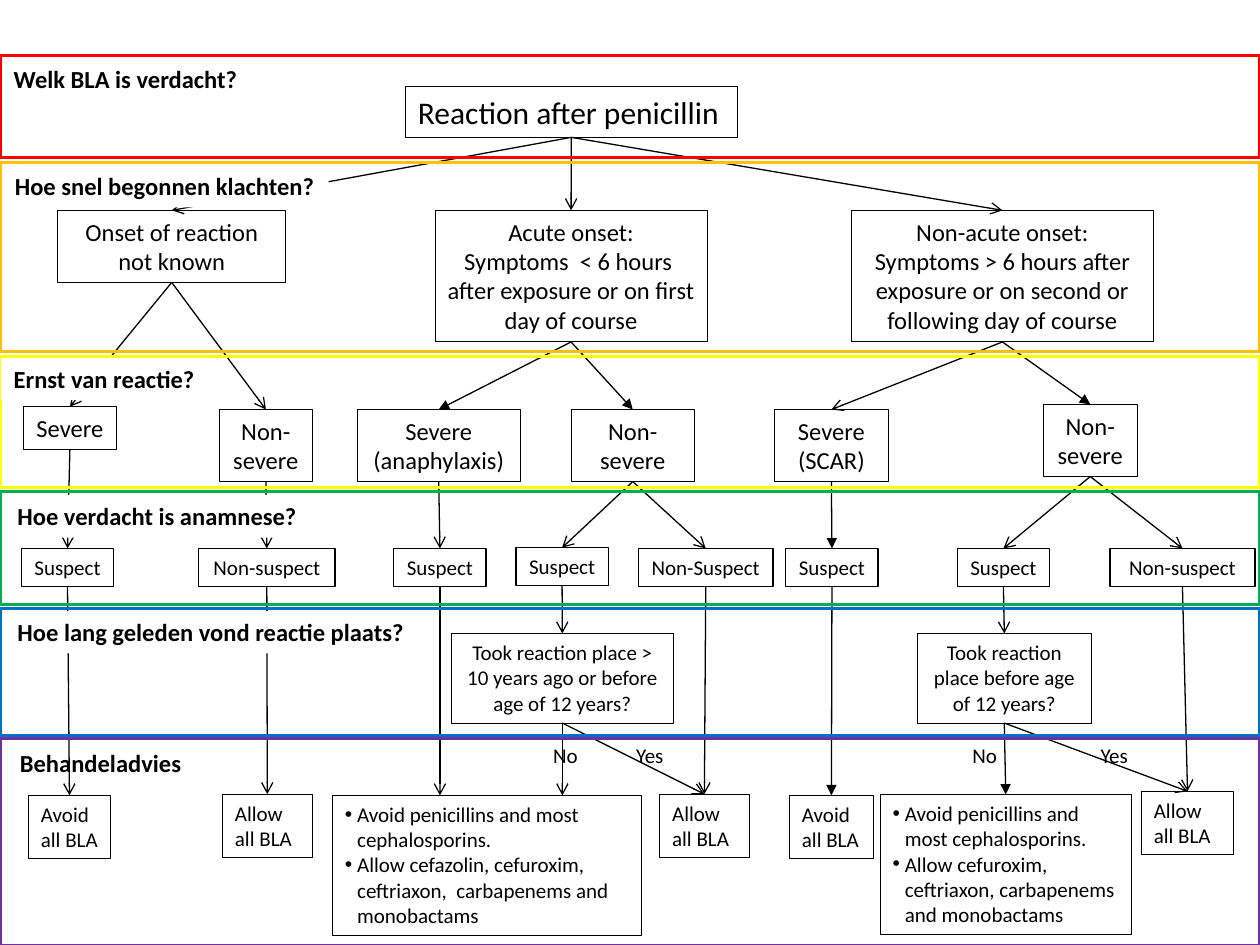
from lxml import etree
from pptx import Presentation
from pptx.dml.color import RGBColor
from pptx.enum.shapes import MSO_CONNECTOR, MSO_SHAPE
from pptx.enum.text import PP_ALIGN
from pptx.oxml.ns import qn
from pptx.util import Pt

LEFT, MID = PP_ALIGN.LEFT, PP_ALIGN.CENTER
RECT, LINE = MSO_SHAPE.RECTANGLE, MSO_CONNECTOR.STRAIGHT
BOTTOM, TOP = 2, 0  # connection sites of a rectangle
FONT = "Calibri"
HEX = {"black": "000000", "white": "FFFFFF", "red": "FF0000",
       "orange": "FFC000", "yellow": "FFFF00", "green": "00B050",
       "blue": "0070C0", "purple": "7030A0"}

# Bands: colour, top, height, label, label left, label top, label width, white label
BANDS = [
    ("red", 31.7, 58.3, "Welk BLA is verdacht?", 0.7, 33.1, 143.3, False),
    ("orange", 92.9, 108, "Hoe snel begonnen klachten?", 1.4, 94.3, 186.5, True),
    ("yellow", 203.8, 74.9, "Ernst van reactie?", 0.7, 204.5, 118.8, True),
    ("green", 280.8, 64.8, "Hoe verdacht is anamnese?", 2.9, 283, 175, True),
    ("blue", 347.8, 72.7, "Hoe lang geleden vond reactie plaats?", 2.9, 349.2, 236.9, True),
    ("purple", 421.9, 118.8, "Behandeladvies", 4.3, 424.1, 107.3, False),
]

# Rows: text size, line width, alignment, boxes (name, left, top, width, height, paragraphs)
SUS, ALLOW, AVOID = ["Suspect"], ["Allow all BLA"], ["Avoid all BLA"]
NON = ["Non-severe"]
ROWS = [
    (18, 0.5, LEFT, [
        ("start", 231.8, 49.5, 189.4, 29, ["Reaction after penicillin"])]),
    (14, 0.5, MID, [
        ("unknown", 33, 120.2, 130.3, 41.2, ["Onset of reaction not known"]),
        ("acute", 248.6, 120.2, 155.5, 75.2,
         ["Acute onset:", "Symptoms  < 6 hours  after exposure or on first day of course"]),
        ("late", 486.7, 120.2, 172.3, 75.2,
         ["Non-acute onset:",
          "Symptoms > 6 hours after exposure or on second or following day of course"])]),
    (14, 0.5, MID, [
        ("sev0", 13.3, 232.4, 53.3, 24.2, ["Severe"]),
        ("mild0", 125.3, 234, 53.3, 41.2, NON),
        ("sev1", 204, 234, 93.4, 41.2, ["Severe (anaphylaxis)"]),
        ("mild1", 326.4, 234, 70.4, 41.2, NON),
        ("sev2", 442.6, 234, 65, 41.2, ["Severe (SCAR)"]),
        ("mild2", 596, 231.1, 54, 41.2, NON)]),
    (12, 0.75, MID, [
        ("sus0", 12.2, 313.4, 52.8, 21.8, SUS),
        ("non0", 113.6, 313.4, 77.8, 21.8, ["Non-suspect"]),
        ("sus1", 225, 313.4, 52.8, 21.8, SUS),
        ("sus2", 294.8, 313, 52.8, 21.8, SUS),
        ("non1", 364.8, 313.4, 77, 21.8, ["Non-Suspect"]),
        ("sus3", 449, 313.4, 52.8, 21.8, SUS),
        ("sus4", 547, 313.4, 52.8, 21.8, SUS),
        ("non2", 634.3, 313.4, 82.8, 21.8, ["Non-suspect"])]),
    (12, 0.5, MID, [
        ("when1", 258, 362, 126.7, 51.2,
         ["Took reaction place > 10 years ago or before age of 12 years?"]),
        ("when2", 524.2, 362, 99.4, 51.2,
         ["Took reaction place before age of 12 years?"])]),
    (12, 0.5, LEFT, [
        ("avoid0", 16.3, 454.5, 46.8, 36, AVOID),
        ("allow0", 127.2, 453.8, 51.1, 36, ALLOW),
        ("some1", 190, 454.5, 176.4, 80,
         ["Avoid penicillins and most cephalosporins.",
          "Allow cefazolin, cefuroxim, ceftriaxon,  carbapenems and monobactams"]),
        ("allow1", 377, 453.8, 51, 36, ALLOW),
        ("avoid2", 451.2, 454.5, 47.8, 36, AVOID),
        ("some2", 503, 454, 143.5, 80,
         ["Avoid penicillins and most cephalosporins.",
          "Allow cefuroxim, ceftriaxon, carbapenems and monobactams"]),
        ("allow2", 652.3, 452.2, 52.6, 36, ALLOW)]),
]
ANSWERS = [("Yes", 356.4, 30.2), ("No", 309, 28.8), ("Yes", 621.8, 30.2), ("No", 548.6, 28.8)]

# Links run from the bottom of one box to the top of the next
OPEN = {"start": "unknown acute late", "unknown": "sev0 mild0", "late": "sev2",
        "sev0": "sus0", "mild0": "non0", "sev1": "sus1", "mild1": "sus2 non1",
        "mild2": "sus4 non2", "sus0": "avoid0", "non0": "allow0", "sus2": "when1",
        "non1": "allow1", "sus4": "when2", "non2": "allow2", "when1": "allow1",
        "when2": "allow2"}
SOLID = {"acute": "sev1 mild1", "late": "mild2", "sev2": "sus3", "sus3": "avoid2",
         "when2": "some2"}
DROPS = [("sus1", "some1"), ("when1", "some1")]  # straight down, off centre


def color(name):
    return RGBColor.from_string(HEX[name])


def add_text(left, top, wide, high, paras, size, align=LEFT, bold=False):
    box = slide.shapes.add_textbox(Pt(left), Pt(top), Pt(wide), Pt(high))
    frame = box.text_frame
    frame.word_wrap = high > 30
    for i, words in enumerate(paras):
        para = frame.paragraphs[0] if i == 0 else frame.add_paragraph()
        para.alignment = align
        run = para.add_run()
        run.text = words
        run.font.name, run.font.size, run.font.bold = FONT, Pt(size), bold
        run.font.color.rgb = color("black")
    return box


def add_bullets(box):
    for para in box.text_frame.paragraphs:
        props = para._p.get_or_add_pPr()
        props.set("marL", str(Pt(7)))
        props.set("indent", str(-Pt(7)))
        etree.SubElement(props, qn("a:buFont")).set("typeface", "Arial")
        etree.SubElement(props, qn("a:buChar")).set("char", "•")


def outline(shape, name, width):
    shape.line.color.rgb = color(name)
    shape.line.width = Pt(width)


def add_link(start, end, head, drop=False):
    a, b = boxes[start], boxes[end]
    x = a.left + a.width // 2
    link = slide.shapes.add_connector(LINE, x, a.top + a.height, x, b.top)
    if not drop:
        link.begin_connect(a, BOTTOM)
        link.end_connect(b, TOP)
    outline(link, "black", 0.75)
    etree.SubElement(link.line._get_or_add_ln(), qn("a:tailEnd")).set("type", head)
    etree.SubElement(link._element.spPr, qn("a:effectLst"))


prs = Presentation()
prs.slide_width, prs.slide_height = Pt(720), Pt(540)
slide = prs.slides.add_slide(prs.slide_layouts[6])

# Decision boxes
boxes = {}
for size, width, align, row in ROWS:
    for name, left, top, wide, high, paras in row:
        box = boxes[name] = add_text(left, top, wide, high, paras, size, align)
        outline(box, "black", width)
        if name.startswith("some"):
            add_bullets(box)

# Arrows
for head, links in (("arrow", OPEN), ("triangle", SOLID)):
    for start, ends in links.items():
        for end in ends.split():
            add_link(start, end, head)
for start, end in DROPS:
    add_link(start, end, "arrow", drop=True)

# Answers on the arrows
for word, left, wide in ANSWERS:
    add_text(left, 420.5, wide, 21.8, [word], 12)

# Coloured bands with their questions
for name, top, high, label, left, y, wide, white in BANDS:
    band = slide.shapes.add_shape(RECT, Pt(0), Pt(top), Pt(720), Pt(high))
    band.shadow.inherit = False
    band.fill.background()
    outline(band, name, 2)
    box = add_text(left, y, wide, 24.2, [label], 14, bold=True)
    if white:
        box.fill.solid()
        box.fill.fore_color.rgb = color("white")

prs.save("out.pptx")
